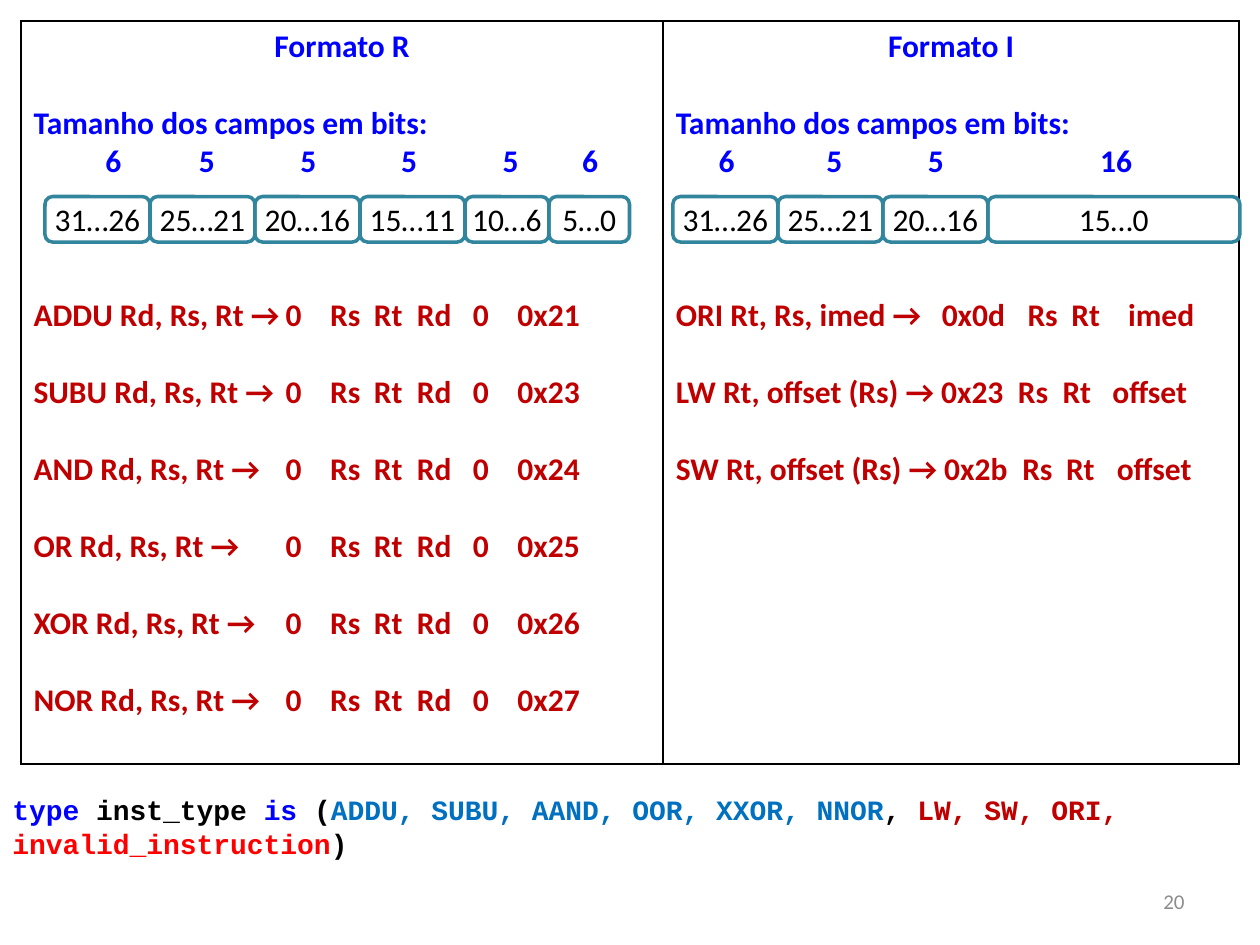
from itertools import accumulate

from lxml import etree
from pptx import Presentation
from pptx.dml.color import RGBColor
from pptx.enum.shapes import MSO_SHAPE
from pptx.enum.text import MSO_ANCHOR, PP_ALIGN
from pptx.oxml.ns import qn
from pptx.util import Pt

ROUNDED = MSO_SHAPE.ROUNDED_RECTANGLE
LEFT, CENTER, RIGHT = PP_ALIGN.LEFT, PP_ALIGN.CENTER, PP_ALIGN.RIGHT
MIDDLE = MSO_ANCHOR.MIDDLE

BLACK, WHITE, BLUE, DARK_RED = "000000", "FFFFFF", "0000FF", "C00000"
TEAL, SKY, RED, GRAY = "31859C", "0070C0", "FF0000", "8C8C8C"
LINE_HEIGHT = 22


def color(value):
    return RGBColor.from_string(value)


def write(paragraph, text, font="Calibri", size=18, hue=BLACK, bold=False,
          align=LEFT, before=0, tabs=()):
    paragraph.alignment = align
    paragraph.space_before = Pt(before)
    run = paragraph.add_run()
    run.text = text
    run.font.name = font
    run.font.size = Pt(size)
    run.font.bold = bold
    run.font.color.rgb = color(hue)
    if tabs:
        tab_list = etree.SubElement(paragraph._p.get_or_add_pPr(), qn("a:tabLst"))
        for position in tabs:
            etree.SubElement(tab_list, qn("a:tab"), pos=str(Pt(position)), algn="l")


class SlideBuilder:
    def __init__(self, slide):
        self.slide = slide

    def text_box(self, left, top, width, height, runs, anchor=None, **style):
        box = self.slide.shapes.add_textbox(Pt(left), Pt(top), Pt(width), Pt(height))
        frame = box.text_frame
        frame.word_wrap = True
        frame.vertical_anchor = anchor
        for text, hue in runs:
            write(frame.paragraphs[0], text, hue=hue, **style)

    def field_row(self, left, top, height, fields):
        widths = [width for _, width in fields]
        for (text, width), offset in zip(fields, accumulate(widths, initial=0)):
            shape = self.slide.shapes.add_shape(
                ROUNDED, Pt(left + offset), Pt(top), Pt(width), Pt(height))
            shape.shadow.inherit = False
            shape.fill.background()
            shape.line.color.rgb = color(TEAL)
            shape.line.width = Pt(2)
            frame = shape.text_frame
            frame.margin_left = frame.margin_right = 0
            frame.margin_top = frame.margin_bottom = 0
            frame.vertical_anchor = MIDDLE
            write(frame.paragraphs[0], text, align=CENTER)

    def table(self, left, top, widths, height, columns):
        table = self.slide.shapes.add_table(
            1, len(widths), Pt(left), Pt(top), Pt(sum(widths)), Pt(height)).table
        table.first_row = table.horz_banding = False
        table.rows[0].height = Pt(height)
        for index, (width, lines) in enumerate(zip(widths, columns)):
            table.columns[index].width = Pt(width)
            cell = table.cell(0, index)
            self.border(cell)
            cell.fill.solid()
            cell.fill.fore_color.rgb = color(WHITE)
            frame = cell.text_frame
            for number, (text, style) in enumerate(lines):
                paragraph = frame.add_paragraph() if number else frame.paragraphs[0]
                write(paragraph, text, bold=True, **style)

    def border(self, cell):
        properties = cell._tc.get_or_add_tcPr()
        for side in ("a:lnL", "a:lnR", "a:lnT", "a:lnB"):
            line = etree.SubElement(properties, qn(side), w=str(Pt(1)))
            fill = etree.SubElement(line, qn("a:solidFill"))
            etree.SubElement(fill, qn("a:srgbClr"), val=BLACK)


def format_column(title, sizes, size_tabs, instructions):
    lines = [
        (title, dict(hue=BLUE, align=CENTER)),
        ("Tamanho dos campos em bits:", dict(hue=BLUE, before=LINE_HEIGHT)),
        ("\t" + "\t".join(sizes), dict(hue=BLUE, tabs=size_tabs)),
    ]
    for index, (text, tabs) in enumerate(instructions):
        before = LINE_HEIGHT if index else 3 * LINE_HEIGHT
        lines.append((text, dict(hue=DARK_RED, before=before, tabs=tabs)))
    return lines


def main():
    presentation = Presentation()
    presentation.slide_width, presentation.slide_height = Pt(720), Pt(540)
    slide = presentation.slides.add_slide(presentation.slide_layouts[6])
    builder = SlideBuilder(slide)

    operations = [("ADDU", "0x21"), ("SUBU", "0x23"), ("AND", "0x24"),
                  ("OR", "0x25"), ("XOR", "0x26"), ("NOR", "0x27")]
    r_tabs = (144, 169.5, 194.5, 219, 251, 276.5)
    r_instructions = [(f"{name} Rd, Rs, Rt →\t0\tRs\tRt\tRd\t0\t{code}", r_tabs)
                      for name, code in operations]
    i_instructions = [
        ("ORI Rt, Rs, imed →\t0x0d\tRs\tRt\timed", (152, 201, 226, 258.5)),
        ("LW Rt, offset (Rs) → 0x23\tRs\tRt\toffset", (195.5, 221, 249.5)),
        ("SW Rt, offset (Rs) → 0x2b\tRs\tRt\toffset", (198, 223, 252)),
    ]
    builder.table(12, 12, (367, 329), 424.5, [
        format_column("Formato R", "655556",
                      (41, 94.5, 152.5, 210, 268, 313.5), r_instructions),
        format_column("Formato I", ("6", "5", "5", "16"),
                      (24.5, 86, 144, 242.5), i_instructions),
    ])

    builder.text_box(516, 500.5, 168, 29, [("20", GRAY)],
                     anchor=MIDDLE, size=12, align=RIGHT)

    shared = [("31…26", 60), ("25…21", 60), ("20…16", 60)]
    builder.field_row(25.7, 112.3, 26, shared + [("15…11", 60), ("10…6", 48), ("5…0", 46)])
    builder.field_row(384.5, 112.3, 26, shared + [("15…0", 144)])

    builder.text_box(0, 449.5, 720, 46, [
        ("type ", BLUE), ("inst_type ", BLACK), ("is ", BLUE), ("(", BLACK),
        ("ADDU, SUBU, AAND, OOR, XXOR, NNOR", SKY), (", ", BLACK),
        ("LW, SW, ORI, ", DARK_RED), ("invalid_instruction", RED), (")", BLACK),
    ], font="Courier New", size=16, bold=True)

    presentation.save("out.pptx")


if __name__ == "__main__":
    main()
